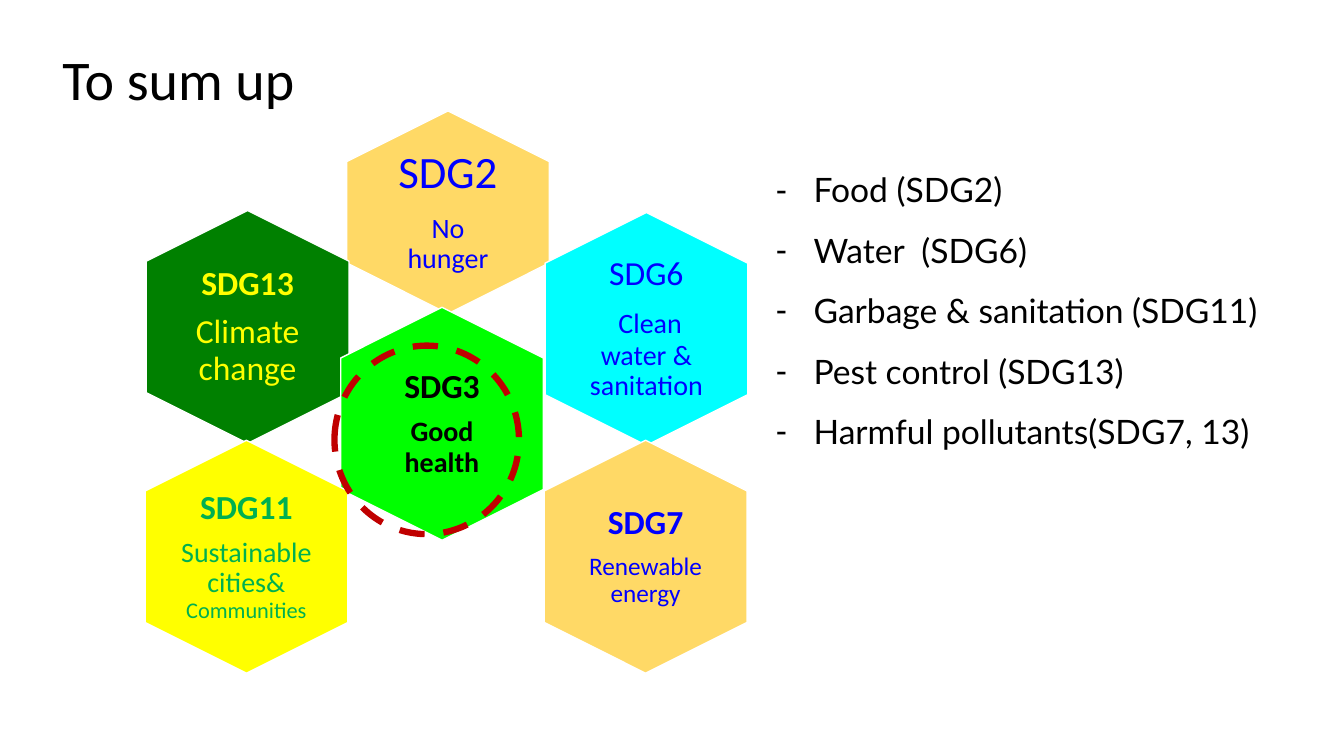
from dataclasses import dataclass

from lxml import etree
from pptx import Presentation
from pptx.dml.color import RGBColor
from pptx.enum.dml import MSO_LINE
from pptx.enum.shapes import MSO_SHAPE
from pptx.enum.text import MSO_ANCHOR, MSO_AUTO_SIZE, PP_ALIGN
from pptx.oxml.ns import qn
from pptx.util import Cm, Pt

HEXAGON = MSO_SHAPE.HEXAGON
OVAL = MSO_SHAPE.OVAL
DASH = MSO_LINE.DASH
CENTER = PP_ALIGN.CENTER
LEFT = PP_ALIGN.LEFT
MIDDLE = MSO_ANCHOR.MIDDLE
TOP = MSO_ANCHOR.TOP
NO_FIT = MSO_AUTO_SIZE.NONE

WHITE = RGBColor(0xFF, 0xFF, 0xFF)
BLACK = RGBColor(0x00, 0x00, 0x00)
BLUE = RGBColor(0x00, 0x00, 0xFF)
GOLD = RGBColor(0xFF, 0xD9, 0x66)
DARK_GREEN = RGBColor(0x00, 0x80, 0x00)
BRIGHT_GREEN = RGBColor(0x00, 0xFF, 0x00)
TEXT_GREEN = RGBColor(0x00, 0xB0, 0x50)
CYAN = RGBColor(0x00, 0xFF, 0xFF)
YELLOW = RGBColor(0xFF, 0xFF, 0x00)
RED = RGBColor(0xC0, 0x00, 0x00)

HEXAGON_WIDTH = 5.11
TALL = 5.87


@dataclass
class Box:
    left: float
    top: float
    width: float
    height: float

    def lengths(self):
        return Cm(self.left), Cm(self.top), Cm(self.width), Cm(self.height)


@dataclass
class Goal:
    center_x: float
    center_y: float
    height: float
    fill: RGBColor
    color: RGBColor
    inset: float
    heading: tuple
    label: list


GOALS = [
    Goal(11.29, 5.35, HEXAGON_WIDTH, GOLD, BLUE, 0.33,
         ("SDG2", 32, False), [("No hunger", 20, False)]),
    Goal(6.24, 8.24, TALL, DARK_GREEN, YELLOW, 0,
         ("SDG13", 24, True), [("Climate change", 24, False)]),
    Goal(11.14, 10.68, TALL, BRIGHT_GREEN, BLACK, 0.25,
         ("SDG3", 24, True), [("Good health", 20, True)]),
    Goal(16.29, 8.29, TALL, CYAN, BLUE, 0,
         ("SDG6", 24, False),
         [(" ", 24, False), ("Clean water & sanitation", 20, False)]),
    Goal(16.27, 14.03, TALL, GOLD, BLUE, 0.25,
         ("SDG7", 24, True), [("Renewable energy", 18, False)]),
    Goal(6.21, 14.03, TALL, YELLOW, TEXT_GREEN, 0,
         ("SDG11", 24, True),
         [("Sustainable cities& ", 20, False), ("Communities", 16, False)]),
]

TOPICS = [
    "Food (SDG2)",
    "Water  (SDG6)",
    "Garbage & sanitation (SDG11)",
    "Pest control (SDG13)",
    "Harmful pollutants(SDG7, 13)",
]


def centered_box(center_x, center_y, width, height):
    return Box(center_x - width / 2, center_y - height / 2, width, height)


def add_span(para, text, size, color, bold=False, font="Calibri"):
    span = para.add_run()
    span.text = text
    span.font.name = font
    span.font.size = Pt(size)
    span.font.bold = bold
    span.font.color.rgb = color


def place(shape, box):
    shape.left, shape.top, shape.width, shape.height = box.lengths()


def prepare_placeholder(shape, box):
    place(shape, box)
    frame = shape.text_frame
    frame.word_wrap = True
    frame.auto_size = NO_FIT
    frame.vertical_anchor = TOP
    return frame


def fill_title(page, box):
    frame = prepare_placeholder(page.shapes.title, box)
    para = frame.paragraphs[0]
    para.alignment = LEFT
    add_span(para, "To sum up", 40, BLACK)


def add_hexagon(group, goal):
    box = centered_box(goal.center_x, goal.center_y, goal.height, HEXAGON_WIDTH)
    hexagon = group.shapes.add_shape(HEXAGON, *box.lengths())
    hexagon.adjustments[0] = 0.25
    hexagon.rotation = 90
    hexagon.shadow.inherit = False
    hexagon.fill.solid()
    hexagon.fill.fore_color.rgb = goal.fill
    hexagon.line.color.rgb = WHITE
    hexagon.line.width = Pt(1)


def add_goal_text(group, goal):
    width, height = (3.5, 4.04) if goal.height == TALL else (3.4, 3.4)
    box = centered_box(goal.center_x, goal.center_y, width, height)
    frame = group.shapes.add_textbox(*box.lengths()).text_frame
    frame.word_wrap = True
    frame.vertical_anchor = MIDDLE
    frame.margin_left = frame.margin_right = Cm(goal.inset)
    frame.margin_top = frame.margin_bottom = Cm(goal.inset)
    for para, spans in ((frame.paragraphs[0], [goal.heading]),
                        (frame.add_paragraph(), goal.label)):
        para.alignment = CENTER
        para.line_spacing = 0.9
        para.space_after = Pt(0.35 * spans[0][1])
        for text, size, bold in spans:
            add_span(para, text, size, goal.color, bold)


def add_goals(page):
    group = page.shapes.add_group_shape()
    for goal in GOALS:
        add_hexagon(group, goal)
        add_goal_text(group, goal)


def add_dash_bullet(para):
    properties = para._p.get_or_add_pPr()
    properties.set("marL", str(Cm(0.95)))
    properties.set("indent", str(Cm(-0.95)))
    etree.SubElement(properties, qn("a:buChar")).set("char", "-")


def fill_topics(page, box):
    frame = prepare_placeholder(page.placeholders[1], box)
    for index, topic in enumerate(TOPICS):
        para = frame.add_paragraph() if index else frame.paragraphs[0]
        add_dash_bullet(para)
        para.alignment = LEFT
        para.line_spacing = 1.5
        para.space_before = Pt(0)
        add_span(para, topic, 24, BLACK, font="Lato")


def add_highlight(page, box):
    ring = page.shapes.add_shape(OVAL, *box.lengths())
    ring.shadow.inherit = False
    ring.fill.background()
    ring.line.color.rgb = RED
    ring.line.width = Pt(4.5)
    ring.line.dash_style = DASH


def main():
    deck = Presentation()
    deck.slide_width = Cm(33.87)
    deck.slide_height = Cm(19.05)
    page = deck.slides.add_slide(deck.slide_layouts[1])
    fill_title(page, Box(1.32, 0.99, 8.5, 1.96))
    add_goals(page)
    fill_topics(page, Box(19.3, 3.63, 14.2, 7.75))
    add_highlight(page, Box(8.43, 8.71, 4.65, 4.75))
    deck.save("out.pptx")


if __name__ == "__main__":
    main()
